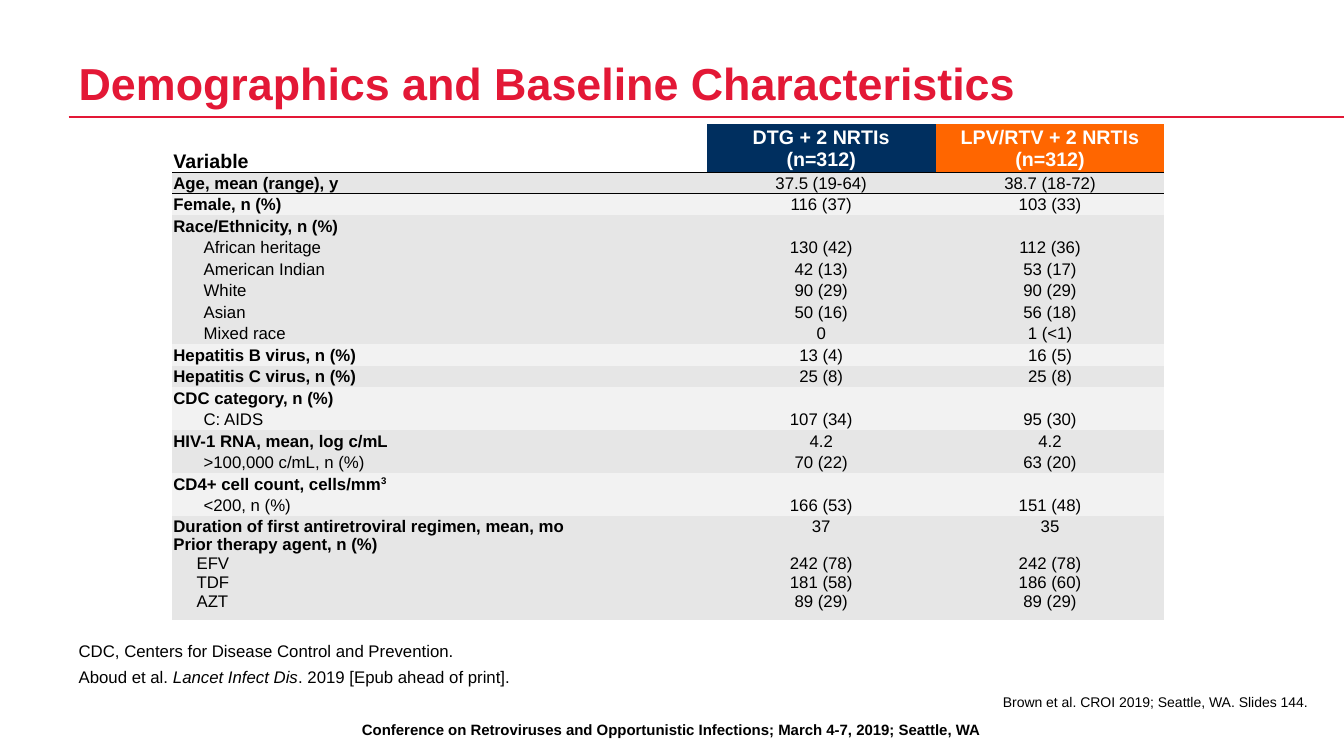
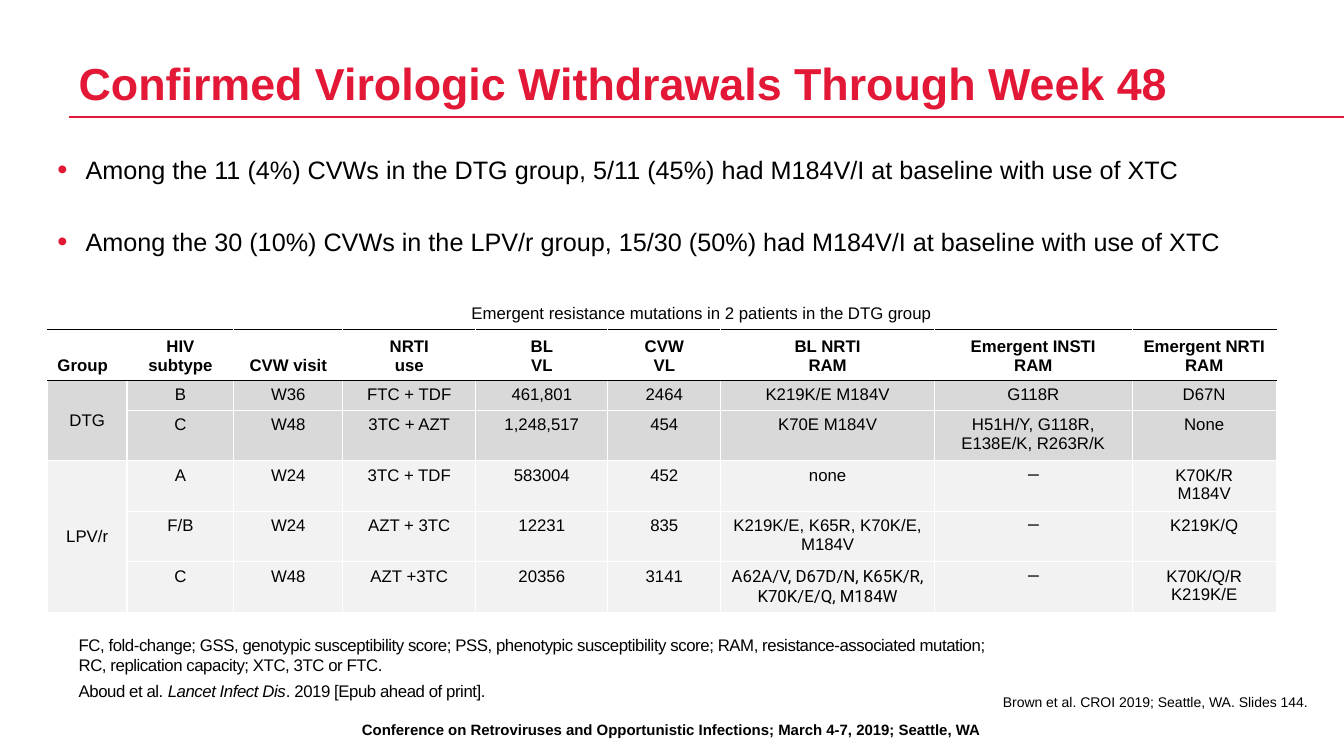
from dataclasses import dataclass
from typing import NamedTuple

from lxml.etree import SubElement
from pptx import Presentation
from pptx.dml.color import RGBColor
from pptx.enum.shapes import MSO_CONNECTOR
from pptx.enum.text import MSO_ANCHOR, MSO_AUTO_SIZE, PP_ALIGN
from pptx.oxml.ns import qn
from pptx.util import Inches, Pt

RED, BLACK, WHITE = "E31836", "000000", "FFFFFF"
NAVY, ORANGE = "002F5F", "FF6600"
DARK, MID, LIGHT = "D9D9D9", "E6E6E6", "F2F2F2"
NO_STYLE = "{2D5ABB26-0587-4C30-8999-92F81FD0307C}"
LEFT, CENTER, RIGHT = PP_ALIGN.LEFT, PP_ALIGN.CENTER, PP_ALIGN.RIGHT
TOP, MIDDLE, BOTTOM = MSO_ANCHOR.TOP, MSO_ANCHOR.MIDDLE, MSO_ANCHOR.BOTTOM


@dataclass
class Line:
    text: str
    bold: bool = False
    indent: float = 0
    after: float = 0
    sup: str = ""


class Row(NamedTuple):
    label: str
    dtg: str
    lpv: str
    fill: str
    sub: bool = False
    sup: str = ""


DEMOGRAPHICS = [
    Row("Age, mean (range), y", "37.5 (19-64)", "38.7 (18-72)", MID),
    Row("Female, n (%)", "116 (37)", "103 (33)", LIGHT),
    Row("Race/Ethnicity, n (%)", "", "", MID),
    Row("African heritage", "130 (42)", "112 (36)", MID, True),
    Row("American Indian", "42 (13)", "53 (17)", MID, True),
    Row("White", "90 (29)", "90 (29)", MID, True),
    Row("Asian", "50 (16)", "56 (18)", MID, True),
    Row("Mixed race", "0", "1 (<1)", MID, True),
    Row("Hepatitis B virus, n (%)", "13 (4)", "16 (5)", LIGHT),
    Row("Hepatitis C virus, n (%)", "25 (8)", "25 (8)", MID),
    Row("CDC category, n (%)", "", "", LIGHT),
    Row("C: AIDS", "107 (34)", "95 (30)", LIGHT, True),
    Row("HIV-1 RNA, mean, log c/mL", "4.2", "4.2", MID),
    Row(">100,000 c/mL, n (%)", "70 (22)", "63 (20)", MID, True),
    Row("CD4+ cell count, cells/mm", "", "", LIGHT, sup="3"),
    Row("<200, n (%)", "166 (53)", "151 (48)", LIGHT, True),
]
THERAPY = [
    [Line("Duration of first antiretroviral regimen, mean, mo", True),
     Line("Prior therapy agent, n (%)", True)]
    + [Line(drug, indent=0.23) for drug in ("EFV", "TDF", "AZT")],
    [Line("37", after=13.5), Line("242 (78)"), Line("181 (58)"), Line("89 (29)")],
    [Line("35", after=13.5), Line("242 (78)"), Line("186 (60)"), Line("89 (29)")],
]
MUTATION_HEADS = ["Group", "HIV subtype", "CVW visit", "NRTI\nuse", "BL\nVL", "CVW\nVL",
                  "BL NRTI\nRAM", "Emergent INSTI\nRAM", "Emergent NRTI RAM"]
LONG_RAM = "A62A/V, D67D/N, K65K/R, K70K/E/Q, M184W"
MUTATIONS = [
    ["DTG", "B", "W36", "FTC + TDF", "461,801", "2464", "K219K/E M184V", "G118R", "D67N"],
    ["", "C", "W48", "3TC + AZT", "1,248,517", "454", "K70E M184V",
     "H51H/Y, G118R, E138E/K, R263R/K", "None"],
    ["LPV/r", "A", "W24", "3TC + TDF", "583004", "452", "none", "—", "K70K/R\nM184V"],
    ["", "F/B", "W24", "AZT + 3TC", "12231", "835", "K219K/E, K65R, K70K/E, M184V", "—",
     "K219K/Q"],
    ["", "C", "W48", "AZT +3TC", "20356", "3141", LONG_RAM, "—", "K70K/Q/R\nK219K/E"],
]
ROBOTO_TEXTS = {"—", LONG_RAM}


def rgb(value: str) -> RGBColor:
    return RGBColor.from_string(value)


def add_text(p, text: str, size: float = 12, color: str = BLACK, bold: bool = False,
             italic: bool = False, font: str = "Arial", spacing: int = 0,
             baseline: int = 0) -> None:
    r = p.add_run()
    r.text = text
    f = r.font
    f.name, f.size, f.bold, f.italic = font, Pt(size), bold, italic
    f.color.rgb = rgb(color)
    for key, value in (("spc", spacing), ("baseline", baseline)):
        if value:
            r._r.get_or_add_rPr().set(key, str(value))


def next_paragraph(tf, first: bool, align=LEFT, after: float = 0):
    p = tf.paragraphs[0] if first else tf.add_paragraph()
    p.alignment = align
    p.space_after = Pt(after)
    return p


def add_box(s, left: float, top: float, width: float, height: float, anchor=TOP,
            inset: bool = False):
    tf = s.shapes.add_textbox(Inches(left), Inches(top), Inches(width), Inches(height)).text_frame
    tf.word_wrap = True
    tf.vertical_anchor = anchor
    if not inset:
        tf.margin_left = tf.margin_top = tf.margin_right = tf.margin_bottom = 0
    return tf


def add_slide(prs, title: str):
    s = prs.slides.add_slide(prs.slide_layouts[5])
    sp = s.shapes.title
    sp.left, sp.top, sp.width, sp.height = Inches(0.78), Inches(0.17), Inches(11), Inches(0.92)
    tf = sp.text_frame
    tf.margin_left = tf.margin_top = tf.margin_right = tf.margin_bottom = 0
    tf.word_wrap = True
    tf.auto_size = MSO_AUTO_SIZE.NONE
    tf.vertical_anchor = BOTTOM
    p = next_paragraph(tf, True)
    p.line_spacing = Pt(46.7)
    add_text(p, title, size=32, color=RED, bold=True)

    rule = s.shapes.add_connector(MSO_CONNECTOR.STRAIGHT, Inches(0.68), Inches(1.16),
                                  Inches(13.33), Inches(1.16))
    rule.line.color.rgb = rgb(RED)
    rule.line.width = Pt(2)
    SubElement(rule._element.spPr, qn("a:effectLst"))

    tf = add_box(s, 0.09, 7.1, 13.14, 0.28, inset=True)
    add_text(next_paragraph(tf, True, CENTER),
             "Conference on Retroviruses and Opportunistic Infections; "
             "March 4-7, 2019; Seattle, WA", size=10.7, bold=True)
    tf = add_box(s, 0.78, 6.88, 12.19, 0.2)
    add_text(next_paragraph(tf, True, RIGHT, 4),
             "Brown et al. CROI 2019; Seattle, WA. Slides 144.", size=10)
    return s


def add_notes(s, abbreviations: str, top: float, width: float, height: float,
              spacing: int = 0) -> None:
    tf = add_box(s, 0.78, top, width, height, BOTTOM)
    add_text(next_paragraph(tf, True, after=4), abbreviations, spacing=spacing)
    p = next_paragraph(tf, False, after=4)
    add_text(p, "Aboud et al. ", spacing=spacing)
    add_text(p, "Lancet Infect Dis", italic=True, spacing=spacing)
    add_text(p, ". 2019 [Epub ahead of print].", spacing=spacing)


def add_grid(s, left: float, top: float, widths: list[float], heights: list[float]):
    table = s.shapes.add_table(len(heights), len(widths), Inches(left), Inches(top),
                               Inches(sum(widths)), Inches(sum(heights))).table
    table.first_row = table.horz_banding = False
    table._tbl.tblPr.find(qn("a:tableStyleId")).text = NO_STYLE
    for col, width in zip(table.columns, widths):
        col.width = Inches(width)
    for row, height in zip(table.rows, heights):
        row.height = Inches(height)
    return table


def set_borders(cell, **colors: str) -> None:
    tcPr = cell._tc.get_or_add_tcPr()
    for side in "LRTB":
        if side in colors:
            ln = SubElement(tcPr, qn(f"a:ln{side}"), w=str(Pt(1)))
            fill = SubElement(ln, qn("a:solidFill"))
            SubElement(fill, qn("a:srgbClr"), val=colors[side])


def fill_cell(cell, lines: list[Line], fill: str, align=CENTER, anchor=MIDDLE, size: float = 12,
              color: str = BLACK, font: str = "Arial") -> None:
    cell.fill.solid()
    cell.fill.fore_color.rgb = rgb(fill)
    cell.vertical_anchor = anchor
    for i, line in enumerate(lines):
        p = next_paragraph(cell.text_frame, i == 0, align, line.after)
        if line.indent:
            p._p.get_or_add_pPr().set("marL", str(Inches(line.indent)))
        if not line.text:
            SubElement(p._p, qn("a:endParaRPr"), sz=str(size * 100))
            continue
        add_text(p, line.text, size=size, color=color, bold=line.bold, font=font)
        if line.sup:
            add_text(p, line.sup, size=size, bold=line.bold, baseline=30000)


def split_lines(text: str, bold: bool = False) -> list[Line]:
    return [Line(part, bold) for part in text.split("\n")]


def demographics_slide(prs) -> None:
    s = add_slide(prs, "Demographics and Baseline Characteristics")
    add_notes(s, "CDC, Centers for Disease Control and Prevention.", 6.21, 12.19, 0.6)
    table = add_grid(s, 1.71, 1.23, [5.3, 2.27, 2.27],
                     [0.48] + [0.213] * len(DEMOGRAPHICS) + [1.03])
    for i, row in enumerate(table.rows):
        for cell in row.cells:
            cell.margin_left = cell.margin_top = cell.margin_right = Inches(0.01)
            cell.margin_bottom = 0
            if i < 2:
                set_borders(cell, B=BLACK)

    fill_cell(table.cell(0, 0), [Line("Variable", True)], WHITE, LEFT, BOTTOM, 14)
    for j, (arm, fill) in enumerate([("DTG", NAVY), ("LPV/RTV", ORANGE)], 1):
        fill_cell(table.cell(0, j), split_lines(f"{arm} + 2 NRTIs\n(n=312)", True), fill,
                  size=14, color=WHITE)
    for i, row in enumerate(DEMOGRAPHICS, 1):
        label = Line(row.label, not row.sub, 0.3 if row.sub else 0, sup=row.sup)
        fill_cell(table.cell(i, 0), [label], row.fill, LEFT)
        for j, value in enumerate((row.dtg, row.lpv), 1):
            fill_cell(table.cell(i, j), [Line(value)], row.fill)
    for j, lines in enumerate(THERAPY):
        fill_cell(table.cell(len(DEMOGRAPHICS) + 1, j), lines, MID, CENTER if j else LEFT, TOP)


def add_bullets(s, texts: list[str]) -> None:
    tf = add_box(s, 0.47, 1.48, 11.97, 0.96, inset=True)
    for i, text in enumerate(texts):
        p = next_paragraph(tf, i == 0, after=30)
        pPr = p._p.get_or_add_pPr()
        pPr.set("marL", str(Inches(0.28)))
        pPr.set("indent", str(Inches(-0.28)))
        SubElement(SubElement(pPr, qn("a:buClr")), qn("a:srgbClr"), val=RED)
        SubElement(pPr, qn("a:buSzPct"), val="115000")
        SubElement(pPr, qn("a:buFont"), typeface="Arial")
        SubElement(pPr, qn("a:buChar"), char="•")
        add_text(p, text, size=18)


def withdrawals_slide(prs) -> None:
    s = add_slide(prs, "Confirmed Virologic Withdrawals Through Week 48")
    add_notes(s, "FC, fold-change; GSS, genotypic susceptibility score; PSS, phenotypic "
              "susceptibility score; RAM, resistance-associated mutation; RC, replication "
              "capacity; XTC, 3TC or FTC.", 6.22, 9.21, 0.73, spacing=-30)
    add_bullets(s, [
        f"Among the {group} group, {share} had M184V/I at baseline with use of XTC"
        for group, share in [("11 (4%) CVWs in the DTG", "5/11 (45%)"),
                             ("30 (10%) CVWs in the LPV/r", "15/30 (50%)")]])
    table = add_grid(s, 0.47, 2.97, [0.79, 1.06, 1.08, 1.32, 1.31, 1.12, 2.12, 1.96, 1.43],
                     [0.29, 0.48, 0.29, 0.48, 0.48, 0.48, 0.51])
    for i, row in enumerate(table.rows):
        for cell in row.cells:
            set_borders(cell, L=WHITE, R=WHITE, T=BLACK if i in (1, 2) else WHITE,
                        B=BLACK if i < 2 else WHITE)
    for start, end in [((0, 1), (0, 8)), ((2, 0), (3, 0)), ((4, 0), (6, 0))]:
        table.cell(*start).merge(table.cell(*end))

    fill_cell(table.cell(0, 0), [Line("")], WHITE)
    fill_cell(table.cell(0, 1),
              [Line("Emergent resistance mutations in 2 patients in the DTG group")],
              WHITE, anchor=TOP)
    for j, head in enumerate(MUTATION_HEADS):
        fill_cell(table.cell(1, j), split_lines(head, True), WHITE, CENTER if j else LEFT, BOTTOM)
    for i, values in enumerate(MUTATIONS, 2):
        for j, value in enumerate(values):
            fill_cell(table.cell(i, j), split_lines(value), DARK if i < 4 else LIGHT,
                      anchor=TOP if j else MIDDLE,
                      font="Roboto" if value in ROBOTO_TEXTS else "Arial")


def main() -> None:
    prs = Presentation()
    prs.slide_width, prs.slide_height = Inches(13.33), Inches(7.5)
    demographics_slide(prs)
    withdrawals_slide(prs)
    prs.save("out.pptx")


if __name__ == "__main__":
    main()
